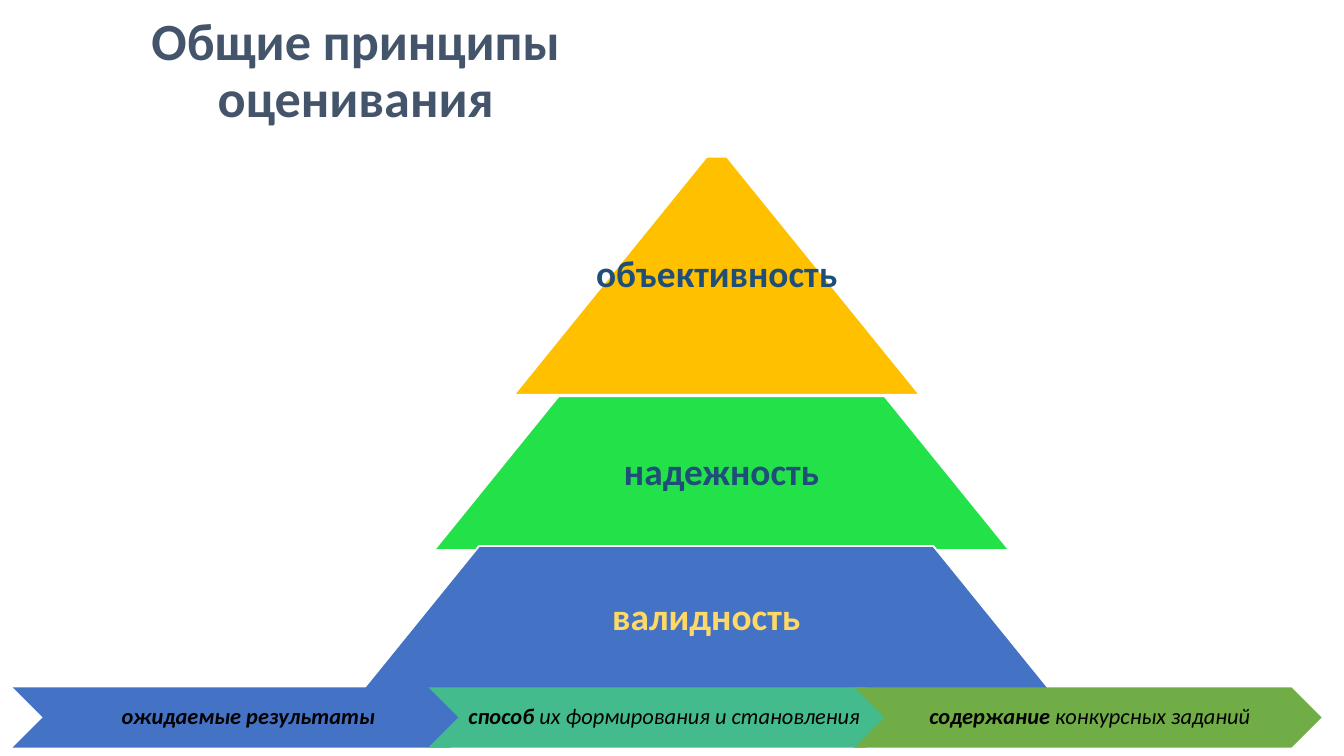
import pptx
import pptx.util
import pptx.dml.color
import pptx.enum.shapes
import pptx.enum.text

PX = 9525
SHAPES = pptx.enum.shapes.MSO_SHAPE


def color(value):
    return pptx.dml.color.RGBColor.from_string(value)


def write(shape, runs, size, ink, italic=False, margins=(10, 5, 10, 5)):
    frame = shape.text_frame
    frame.word_wrap = True
    frame.auto_size = pptx.enum.text.MSO_AUTO_SIZE.NONE
    frame.vertical_anchor = pptx.enum.text.MSO_ANCHOR.MIDDLE
    frame.margin_left, frame.margin_top, frame.margin_right, frame.margin_bottom = [
        margin * PX for margin in margins
    ]
    paragraph = frame.paragraphs[0]
    paragraph.alignment = pptx.enum.text.PP_ALIGN.CENTER
    paragraph.line_spacing = 0.9
    for text, bold in runs:
        run = paragraph.add_run()
        run.text = text
        run.font.name = "Calibri"
        run.font.size = pptx.util.Pt(size)
        run.font.bold = bold
        run.font.italic = italic
        run.font.color.rgb = color(ink)


presentation = pptx.Presentation()
presentation.slide_width = 960 * PX
presentation.slide_height = 540 * PX
slide = presentation.slides.add_slide(presentation.slide_layouts[5])

title = slide.shapes.title
title.left, title.top, title.width, title.height = 0, 26 * PX, 508 * PX, 51 * PX
write(title, [("Общие принципы оценивания", True)], size=28, ink="44546A")

levels = [
    ("объективность", 367, 112, 290, 170, 0, "FFC000", "1F4E79"),
    ("надежность", 310, 283, 411, 110, 72, "23E148", "1F4E79"),
    ("валидность", 258, 390, 493, 104, 86, "4472C4", "FFD966"),
]
for text, left, top, width, height, inset, fill, ink in levels:
    level = slide.shapes.add_shape(
        SHAPES.TRAPEZOID, left * PX, top * PX, width * PX, height * PX
    )
    level.adjustments[0] = 0.81
    level.shadow.inherit = False
    level.fill.solid()
    level.fill.fore_color.rgb = color(fill)
    level.line.color.rgb = color("FFFFFF")
    level.line.width = pptx.util.Pt(1)
    label = slide.shapes.add_textbox(
        (left + inset) * PX, top * PX, (width - 2 * inset) * PX, height * PX
    )
    write(label, [(text, True)], size=20, ink=ink, margins=(3, 3, 3, 3))

steps = [
    (9, "4472C4", [("ожидаемые результаты", True)]),
    (306, "43BB8D", [("способ", True), (" их формирования и становления", False)]),
    (610, "70AD47", [("содержание", True), (" конкурсных заданий", False)]),
]
for left, fill, runs in steps:
    box = (left * PX, 491 * PX, 334 * PX, 43 * PX)
    chevron = slide.shapes.add_shape(SHAPES.CHEVRON, *box)
    chevron.shadow.inherit = False
    chevron.fill.solid()
    chevron.fill.fore_color.rgb = color(fill)
    chevron.line.fill.background()
    label = slide.shapes.add_textbox(*box)
    write(label, runs, size=12, ink="000000", italic=True, margins=(5, 2, 2, 2))

presentation.save("out.pptx")
